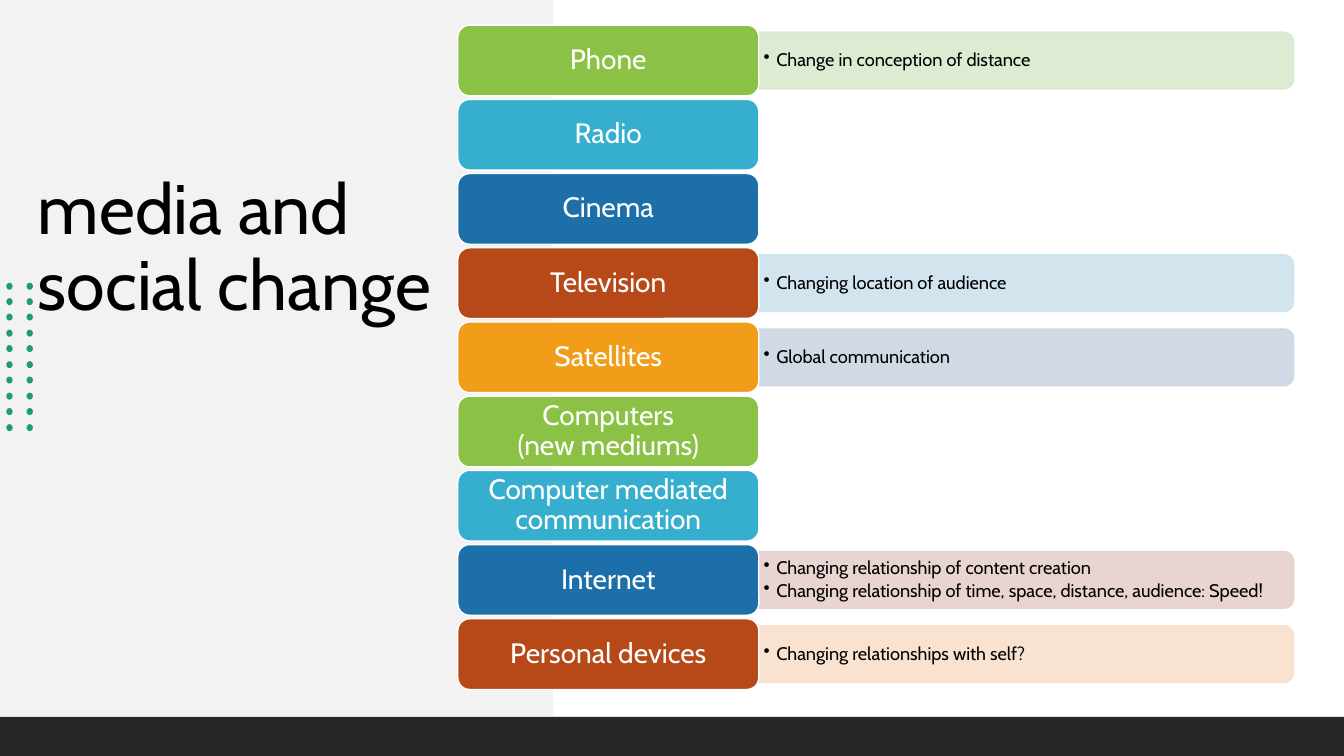
from math import cos, pi, sin

from lxml.etree import SubElement
from pptx import Presentation
from pptx.dml.color import RGBColor
from pptx.enum.shapes import MSO_SHAPE
from pptx.enum.text import MSO_ANCHOR, PP_ALIGN
from pptx.oxml.ns import qn
from pptx.util import Pt

PX = 6350  # EMU in one px, 144 px to the inch
FONT = "Cabin"
HUES = {
    "pane": "F2F2F2", "foot": "262626", "dot": "1D9A78",
    "ink": "000000", "white": "FFFFFF",
    "lime": "8BC145", "cyan": "36AFCE", "blue": "1D6FA9",
    "rust": "B74919", "gold": "F19D19",
    "mint": "DAE9CF", "sky": "CEE3ED", "mist": "CDD5E2",
    "rose": "E6D0CC", "peach": "FADFCC",
}
CYCLE = ["lime", "cyan", "blue", "rust", "gold"]
MEDIA = [
    (["Phone"], "mint", ["Change in conception of distance"]),
    (["Radio"], None, []),
    (["Cinema"], None, []),
    (["Television"], "sky", ["Changing location of audience"]),
    (["Satellites"], "mist", ["Global communication"]),
    (["Computers", "(new mediums)"], None, []),
    (["Computer mediated communication"], None, []),
    (["Internet"], "rose", [
        "Changing relationship of content creation",
        "Changing relationship of time, space, distance, audience: Speed!"]),
    (["Personal devices"], "peach", ["Changing relationships with self?"]),
]


def rgb(hue):
    return RGBColor.from_string(HUES[hue])


def paint(shape, fill, line=None):
    shape.shadow.inherit = False
    shape.fill.solid()
    shape.fill.fore_color.rgb = rgb(fill)
    if line:
        shape.line.color.rgb = rgb(line)
        shape.line.width = Pt(1)
    else:
        shape.line.fill.background()


def add(slide, kind, box, fill, line=None):
    shape = slide.shapes.add_shape(kind, *(n * PX for n in box))
    paint(shape, fill, line)
    return shape


def write(shape, lines, size, hue, pads, align=PP_ALIGN.LEFT, bullet=False):
    frame = shape.text_frame
    frame.word_wrap = True
    frame.vertical_anchor = MSO_ANCHOR.MIDDLE
    (frame.margin_left, frame.margin_top,
     frame.margin_right, frame.margin_bottom) = (n * PX for n in pads)
    frame.text = "\n".join(lines)
    for para in frame.paragraphs:
        para.alignment = align
        para.line_spacing = 0.9
        if bullet:
            para.space_after = Pt(2)
            props = para._p.get_or_add_pPr()
            props.set("marL", str(18 * PX))
            props.set("indent", str(-18 * PX))
            SubElement(props, qn("a:buChar"), char="•")
        para.font.name = FONT
        para.font.size = Pt(size)
        para.font.color.rgb = rgb(hue)


def title(slide, box):
    text = slide.shapes.add_textbox(*(n * PX for n in box))
    write(text, ["media and social change"], 50, "ink", (14, 7, 14, 7))


def dots(slide, box):
    left, top, wide, high = box
    for row in range(10):
        for col in range(2):
            spot = (left + col * (wide - 9), top + row * (high - 10) // 9, 9, 10)
            add(slide, MSO_SHAPE.OVAL, spot, "dot")


def detail(slide, box, hue, lines):
    # Flat on the left, rounded on the right
    left, top, wide, high = box
    right, low, bend = left + wide, top + high, 14
    turns = [i * pi / 16 for i in range(9)]
    upper = [(right - bend + bend * sin(t), top + bend - bend * cos(t)) for t in turns]
    lower = [(right - bend + bend * cos(t), low - bend + bend * sin(t)) for t in turns]
    points = [(x * PX, y * PX) for x, y in upper + lower + [(left, low)]]
    path = slide.shapes.build_freeform(left * PX, top * PX)
    path.add_line_segments(points, close=True)
    shape = path.convert_to_shape()
    paint(shape, hue, hue)
    for color in shape._element.spPr.iter(qn("a:srgbClr")):
        SubElement(color, qn("a:alpha"), val="90000")
    write(shape, lines, 13, "ink", (7, 7, 12, 7), bullet=True)


def media(slide, box):
    left, top, wide, high = box
    step, tall, name = 106, 101, 430
    for row, (label, hue, notes) in enumerate(MEDIA):
        y = top + row * step
        if notes:
            detail(slide, (left + name, y + 10, wide - name, tall - 20), hue, notes)
        bar = add(slide, MSO_SHAPE.ROUNDED_RECTANGLE, (left, y, name, tall),
                  CYCLE[row % len(CYCLE)], "white")
        write(bar, label, 20, "white", (12, 6, 12, 6), PP_ALIGN.CENTER)


def main():
    deck = Presentation()
    deck.slide_width, deck.slide_height = 1920 * PX, 1080 * PX
    slide = deck.slides.add_slide(deck.slide_layouts[6])
    # Left pane with title and dots
    add(slide, MSO_SHAPE.RECTANGLE, (0, 0, 790, 1023), "pane")
    title(slide, (40, 36, 611, 641))
    dots(slide, (9, 404, 38, 212))
    # Footer band
    add(slide, MSO_SHAPE.RECTANGLE, (0, 1024, 1920, 56), "foot")
    # Media list
    media(slide, (654, 36, 1194, 949))
    deck.save("out.pptx")


if __name__ == "__main__":
    main()
